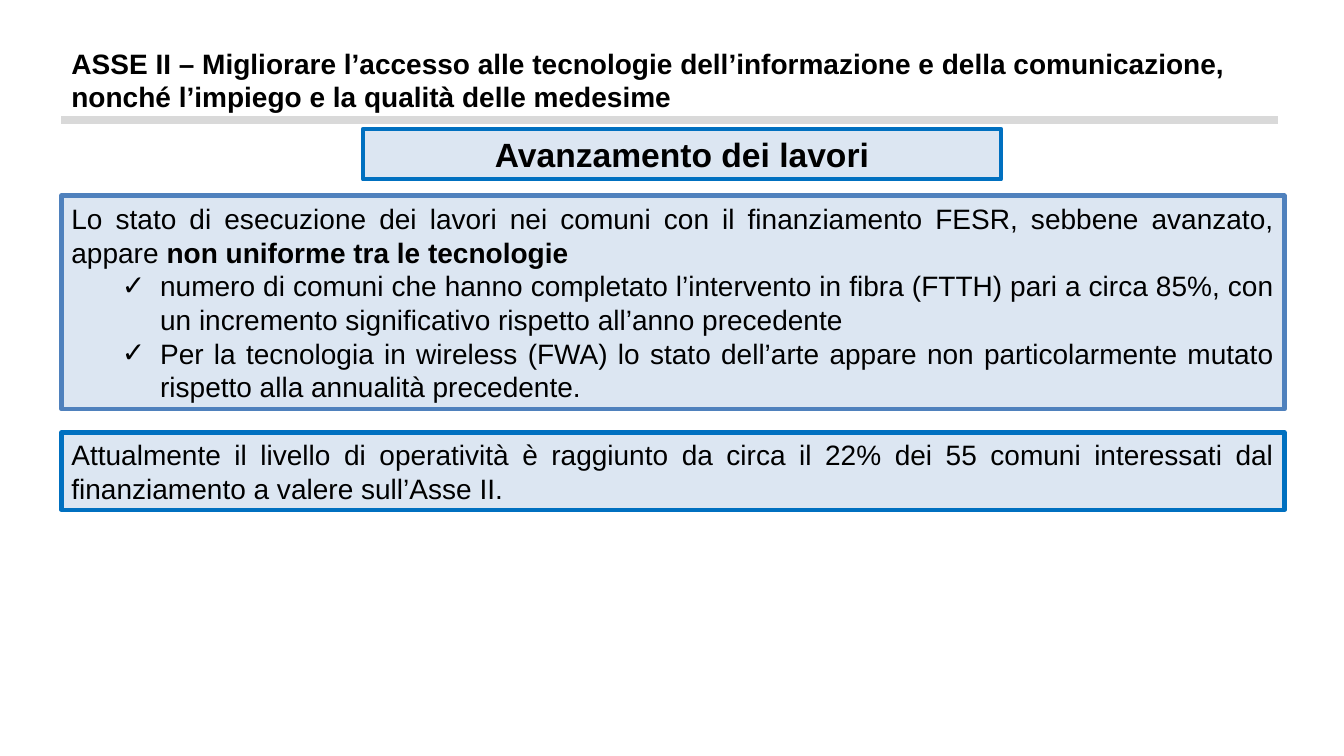
import dataclasses

import pptx
import pptx.dml.color
import pptx.enum.shapes
import pptx.enum.text
import pptx.oxml
import pptx.oxml.ns
import pptx.util

PX = 9144  # EMU, 100 px to the inch
ALIGN = pptx.enum.text.PP_ALIGN


@dataclasses.dataclass(frozen=True)
class Theme:
    font: str = "Arial"
    text: str = "000000"
    rule: str = "D9D9D9"
    panel: str = "DCE6F2"
    blue: str = "0070C0"
    steel: str = "4F81BD"
    body_pt: int = 20
    heading_pt: int = 24
    border_pt: int = 3
    rule_pt: int = 6


THEME = Theme()
LEFT, TEXT_W, PANEL_W = 61, 1207, 1213


def px(*lengths):
    return [pptx.util.Emu(n * PX) for n in lengths]


def rgb(code):
    return pptx.dml.color.RGBColor.from_string(code)


def add_text(p, text, size=THEME.body_pt, bold=False):
    r = p.add_run()
    r.text = text
    r.font.name = THEME.font
    r.font.size = pptx.util.Pt(size)
    r.font.bold = bold
    r.font.color.rgb = rgb(THEME.text)


def set_bullet(p, indent=88, hang=38, char="✓"):
    p.level = 1
    pPr = p._p.get_or_add_pPr()
    pPr.set("marL", str(indent * PX))
    pPr.set("indent", str(-hang * PX))
    for tag, name, value in (("a:buFont", "typeface", THEME.font),
                             ("a:buChar", "char", char)):
        bullet = pptx.oxml.parse_xml(f"<{tag} {pptx.oxml.ns.nsdecls('a')}/>")
        bullet.set(name, value)
        pPr.append(bullet)


def fill_frame(tf, paragraphs, align, size=THEME.body_pt):
    """Write paragraphs given as (bulleted, [(text, bold), ...])."""
    tf.word_wrap = True
    tf.auto_size = pptx.enum.text.MSO_AUTO_SIZE.SHAPE_TO_FIT_TEXT
    for i, (bulleted, runs) in enumerate(paragraphs):
        p = tf.add_paragraph() if i else tf.paragraphs[0]
        p.alignment = align
        if bulleted:
            set_bullet(p)
        for text, bold in runs:
            add_text(p, text, size=size, bold=bold)


def add_rule(s, x1, x2, y):
    line = s.shapes.add_connector(
        pptx.enum.shapes.MSO_CONNECTOR.STRAIGHT, *px(x1, y, x2, y))
    line.line.color.rgb = rgb(THEME.rule)
    line.line.width = pptx.util.Pt(THEME.rule_pt)
    line._element.spPr.append(
        pptx.oxml.parse_xml(f"<a:effectLst {pptx.oxml.ns.nsdecls('a')}/>"))


def add_title(s, box, text):
    sp = s.shapes.add_textbox(*px(*box))
    fill_frame(sp.text_frame, [(False, [(text, True)])], ALIGN.LEFT)


def add_panel(s, box, paragraphs, border=THEME.blue, align=ALIGN.JUSTIFY,
              size=THEME.body_pt):
    sp = s.shapes.add_shape(
        pptx.enum.shapes.MSO_SHAPE.RECTANGLE, *px(*box))
    sp.shadow.inherit = False
    sp.fill.solid()
    sp.fill.fore_color.rgb = rgb(THEME.panel)
    sp.line.color.rgb = rgb(border)
    sp.line.width = pptx.util.Pt(THEME.border_pt)
    fill_frame(sp.text_frame, paragraphs, align, size)


def main():
    prs = pptx.Presentation()
    prs.slide_width, prs.slide_height = px(1333, 750)
    s = prs.slides.add_slide(prs.slide_layouts[6])

    add_rule(s, LEFT, LEFT + TEXT_W, 119)
    add_title(s, (LEFT, 41, TEXT_W, 77),
              "ASSE II – Migliorare l’accesso alle tecnologie "
              "dell’informazione e della comunicazione, nonché l’impiego e "
              "la qualità delle medesime")
    add_panel(s, (LEFT, 194, PANEL_W, 212), [
        (False, [("Lo stato di esecuzione dei lavori nei comuni con il "
                  "finanziamento FESR, sebbene avanzato, appare ", False),
                 ("non uniforme tra le tecnologie", True)]),
        (True, [("numero di comuni che hanno completato l’intervento in "
                 "fibra (FTTH) pari a circa 85%, con un incremento "
                 "significativo rispetto all’anno precedente", False)]),
        (True, [("Per la tecnologia in wireless (FWA) lo stato dell’arte "
                 "appare non particolarmente mutato rispetto alla annualità "
                 "precedente.", False)]),
    ], border=THEME.steel)
    add_panel(s, (LEFT, 429, PANEL_W, 77), [
        (False, [("Attualmente il livello di operatività è raggiunto da "
                  "circa il 22% dei 55 comuni interessati dal finanziamento "
                  "a valere sull’Asse II.", False)]),
    ])
    add_panel(s, (360, 128, 633, 50),
              [(False, [("Avanzamento dei lavori", True)])],
              align=ALIGN.CENTER, size=THEME.heading_pt)

    prs.save("out.pptx")


if __name__ == "__main__":
    main()
